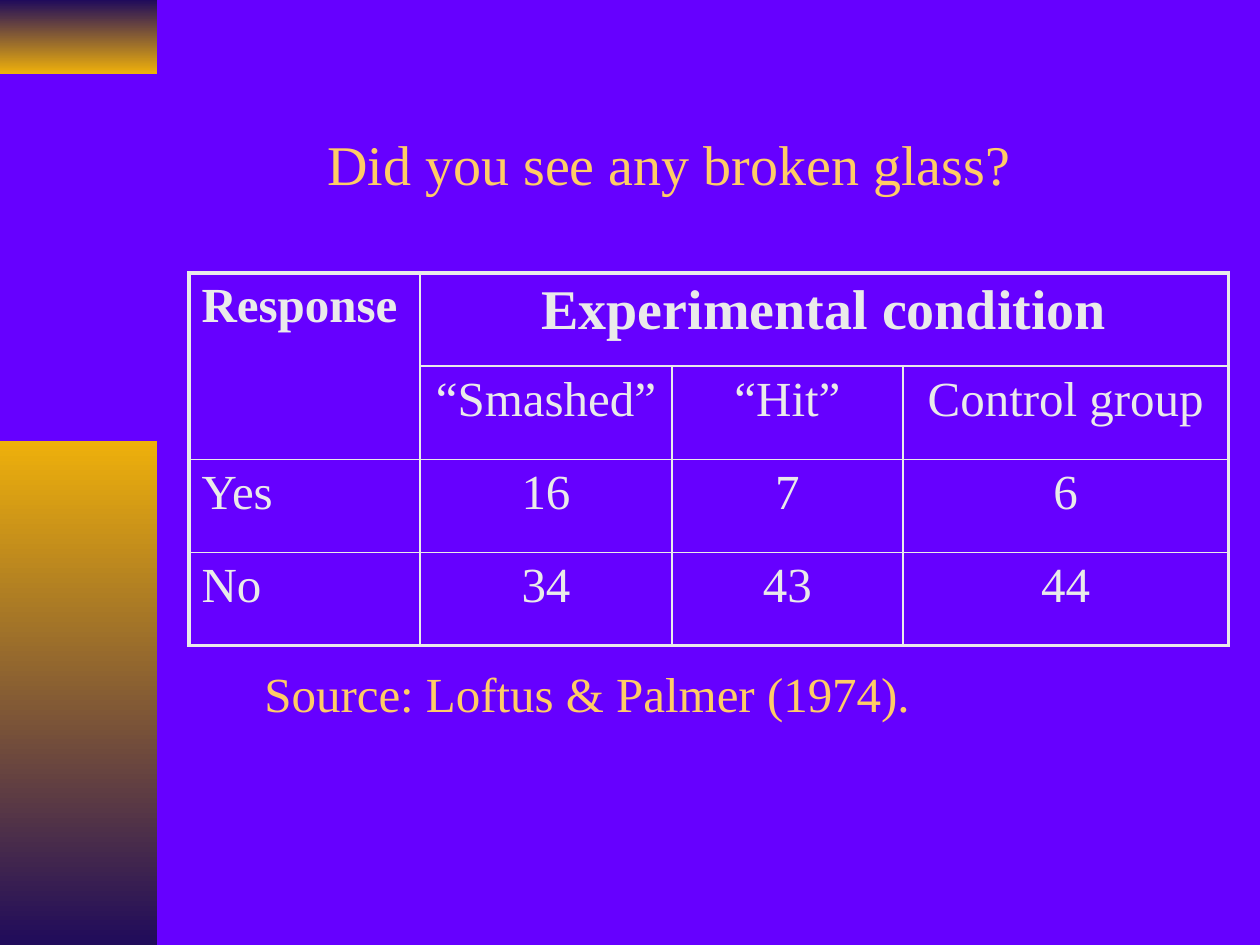
from lxml.etree import SubElement
from pptx import Presentation
from pptx.dml.color import RGBColor
from pptx.enum.shapes import MSO_SHAPE
from pptx.enum.text import MSO_ANCHOR, PP_ALIGN
from pptx.oxml.ns import qn
from pptx.util import Inches, Pt

VIOLET = RGBColor(0x66, 0x00, 0xFF)
NAVY = RGBColor(0x20, 0x0B, 0x5B)
AMBER = RGBColor(0xEE, 0xB0, 0x0B)
GOLD = RGBColor(0xFF, 0xCC, 0x66)
PALE = RGBColor(0xEA, 0xEA, 0xEA)
FONT = "Times New Roman"
COLUMNS, ROWS = 120, 90
UNIT = Inches(10) / COLUMNS
THIN, THICK = Pt(1), Pt(2.25)

COLUMN_WIDTHS = (22, 24, 22, 31)
RESULTS = (
    ("Response", "Experimental condition", "", ""),
    ("", "“Smashed”", "“Hit”", "Control group"),
    ("Yes", "16", "7", "6"),
    ("No", "34", "43", "44"),
)


def grid(*cells):
    """Turn grid columns and rows into slide lengths."""
    return [round(cell * UNIT) for cell in cells]


def add_span(para, text, size, color, bold=False):
    span = para.add_run()
    span.text = text
    span.font.name = FONT
    span.font.size = Pt(size)
    span.font.bold = bold
    span.font.color.rgb = color


def add_gradient_band(page, box, top_color, bottom_color):
    band = page.shapes.add_shape(MSO_SHAPE.RECTANGLE, *grid(*box))
    band.shadow.inherit = False
    band.line.fill.background()
    band.fill.gradient()
    band.fill.gradient_angle = 270
    for stop, color in zip(band.fill.gradient_stops, (top_color, bottom_color)):
        stop.color.rgb = color


def add_caption(page, box, text, size):
    frame = page.shapes.add_textbox(*grid(*box)).text_frame
    frame.word_wrap = True
    frame.vertical_anchor = MSO_ANCHOR.MIDDLE
    add_span(frame.paragraphs[0], text, size, GOLD)


def set_borders(cell, outer_sides):
    """Draw thick lines on the table's outer sides and thin ones elsewhere."""
    properties = cell._tc.get_or_add_tcPr()
    for position, side in enumerate("LRTB"):
        width = THICK if side in outer_sides else THIN
        line = SubElement(properties, qn(f"a:ln{side}"), w=str(int(width)))
        fill = SubElement(line, qn("a:solidFill"))
        SubElement(fill, qn("a:srgbClr"), val=str(PALE))
        properties.insert(position, line)


def add_results_table(page, box):
    row_count, column_count = len(RESULTS), len(COLUMN_WIDTHS)
    table = page.shapes.add_table(row_count, column_count, *grid(*box)).table
    table.first_row = table.horz_banding = False
    for column, share in zip(table.columns, COLUMN_WIDTHS):
        column.width = round(box[2] * share / sum(COLUMN_WIDTHS) * UNIT)
    for row in table.rows:
        row.height = round(box[3] / row_count * UNIT)
    table.cell(0, 0).merge(table.cell(1, 0))
    table.cell(0, 1).merge(table.cell(0, 3))

    for r, texts in enumerate(RESULTS):
        for c, text in enumerate(texts):
            cell = table.cell(r, c)
            cell.fill.background()
            outer = {
                "L": c == 0,
                "R": c + cell.span_width == column_count,
                "T": r == 0,
                "B": r + cell.span_height == row_count,
            }
            set_borders(cell, [side for side in outer if outer[side]])
            if text:
                para = cell.text_frame.paragraphs[0]
                para.alignment = PP_ALIGN.CENTER if c else PP_ALIGN.LEFT
                size = 32 if cell.span_width > 1 else 28
                add_span(para, text, size, PALE, bold=r == 0)


def main():
    deck = Presentation()
    deck.slide_width, deck.slide_height = grid(COLUMNS, ROWS)
    page = deck.slides.add_slide(deck.slide_layouts[6])
    page.background.fill.solid()
    page.background.fill.fore_color.rgb = VIOLET

    add_gradient_band(page, (0, 0, 15, 7), NAVY, AMBER)
    add_gradient_band(page, (0, 42, 15, 48), AMBER, NAVY)
    add_results_table(page, (18, 26, 99, 35.5))
    add_caption(page, (30, 10, 73, 11), "Did you see any broken glass?", 32)
    add_caption(page, (24, 62, 82, 8), "Source: Loftus & Palmer (1974).", 28)
    deck.save("out.pptx")


if __name__ == "__main__":
    main()
